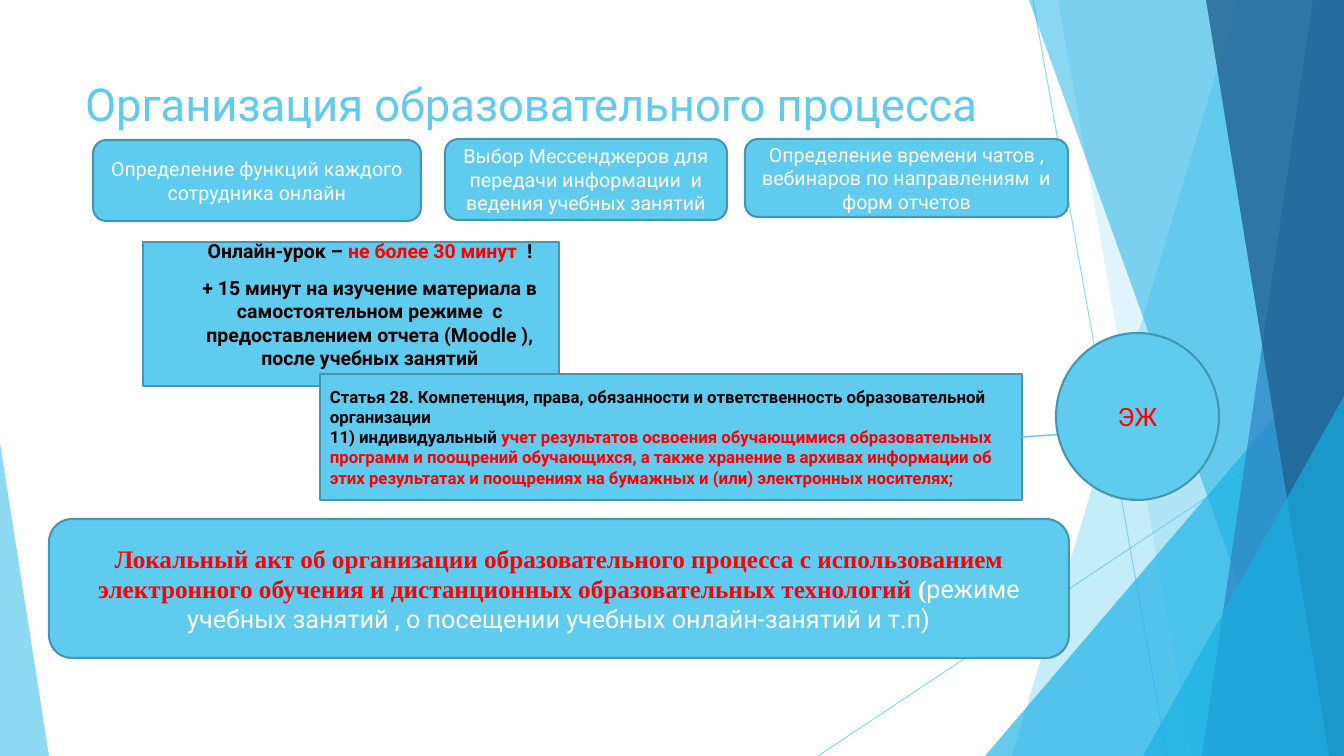
import pptx
import pptx.util
import pptx.dml.color
import pptx.enum.shapes
import pptx.enum.text
import pptx.oxml
import pptx.oxml.ns

RGB = pptx.dml.color.RGBColor
KIND = pptx.enum.shapes.MSO_SHAPE
ALIGN = pptx.enum.text.PP_ALIGN
ANCHOR = pptx.enum.text.MSO_ANCHOR

SKY = RGB(0x5F, 0xCB, 0xEF)
EDGE = RGB(0x46, 0x96, 0xB1)
CYAN = RGB(0x17, 0xB0, 0xE4)
BLUE = RGB(0x2E, 0x83, 0xC3)
NAVY = RGB(0x22, 0x62, 0x92)
RED = RGB(0xFF, 0, 0)
BLACK = RGB(0, 0, 0)
WHITE = RGB(0xFF, 0xFF, 0xFF)

EMU_PER_PX = 914400 / 100.8
WIDTH, HEIGHT = 1344, 756
SANS, SERIF = "Roboto", "Times New Roman"

TITLE = "Организация образовательного процесса"
TITLE_BOX = (75, 67, 947, 51)

RAYS = [(1033, 0, 1167, HEIGHT), (WIDTH, 406, 818, HEIGHT)]
# fmt: off
FACETS = [
    ("band", (1238, WIDTH, WIDTH, 1012), SKY, 36),
    ("band", (1058, WIDTH, WIDTH, 1192), SKY, 20),
    ("triangle", (985, 336, 359, 1), CYAN, 66),
    ("band", (1029, WIDTH, WIDTH, 1301), CYAN, 50),
    ("band", (1313, WIDTH, WIDTH, 1202), BLUE, 70),
    ("band", (1206, WIDTH, WIDTH, 1329), NAVY, 80),
    ("triangle", (1143, 396, 201, 1), CYAN, 66),
    ("triangle", (0, 443, 49, 0), SKY, 70),
]

STEPS = [
    ((93, 140, 328, 81), "Определение функций каждого сотрудника онлайн"),
    ((445, 139, 282, 81), "Выбор Мессенджеров для передачи информации  и ведения учебных занятий"),
    ((745, 139, 323, 78), "Определение времени чатов , вебинаров по направлениям  и форм отчетов"),
]

LESSON_BOX = (143, 242, 416, 144)
LESSON = [
    [("Онлайн-урок – ", SANS, BLACK, True),
     ("не более 30 минут  ", SANS, RED, True),
     ("!", SANS, BLACK, True)],
    [("+ 15 минут на изучение материала в самостоятельном режиме  с "
      "предоставлением отчета (Moodle ), после учебных занятий", SANS, BLACK, True)],
]

ARTICLE_BOX = (320, 374, 702, 126)
ARTICLE = [
    [("Статья 28. Компетенция, права, обязанности и ответственность "
      "образовательной организации", SANS, BLACK, True)],
    [("11) индивидуальный ", SANS, BLACK, True),
     ("учет результатов освоения обучающимися образовательных программ и поощрений "
      "обучающихся, а также хранение в архивах информации об этих результатах и "
      "поощрениях на бумажных и (или) электронных носителях;", SANS, RED, True)],
]

JOURNAL_BOX = (1056, 333, 163, 167)
JOURNAL = [[("ЭЖ", SANS, RED, False)]]
JOURNAL_LINK_END = (1067, 434)

ACT_BOX = (49, 519, 1020, 139)
ACT = [[
    ("Локальный акт об организации образовательного процесса с использованием "
     "электронного обучения и дистанционных образовательных технологий ", SERIF, RED, True),
    ("(", SERIF, WHITE, True),
    ("режиме учебных занятий , о посещении учебных онлайн-занятий и т.п)", SANS, WHITE, False),
]]


def px(*lengths):
    return [round(length * EMU_PER_PX) for length in lengths]


def set_alpha(properties, percent):
    color = properties.find(".//" + pptx.oxml.ns.qn("a:srgbClr"))
    alpha = pptx.oxml.parse_xml(f"<a:alpha {pptx.oxml.ns.nsdecls('a')} val='{percent * 1000}'/>")
    color.append(alpha)


def add_line(shapes, ends, width):
    line = shapes.add_connector(pptx.enum.shapes.MSO_CONNECTOR.STRAIGHT, *px(*ends))
    line.line.color.rgb = SKY
    line.line.width = pptx.util.Pt(width)
    line._element.spPr.append(
        pptx.oxml.parse_xml(f"<a:effectLst {pptx.oxml.ns.nsdecls('a')}/>"))
    return line


def add_facet(shapes, kind, geometry, color, percent):
    if kind == "band":
        top_left, top_right, bottom_right, bottom_left = geometry
        outline = shapes.build_freeform(top_left, 0, scale=EMU_PER_PX)
        outline.add_line_segments(
            [(top_right, 0), (bottom_right, HEIGHT), (bottom_left, HEIGHT)], close=True)
        facet = outline.convert_to_shape()
    else:
        left, top, width, apex = geometry
        facet = shapes.add_shape(KIND.ISOSCELES_TRIANGLE, *px(left, top, width, HEIGHT - top))
        facet.adjustments[0] = apex
    facet.shadow.inherit = False
    facet.fill.solid()
    facet.fill.fore_color.rgb = color
    facet.line.fill.background()
    set_alpha(facet._element.spPr, percent)


def write(paragraph, runs, size):
    for text, font, color, bold in runs:
        run = paragraph.add_run()
        run.text = text
        run.font.name = font
        run.font.size = pptx.util.Pt(size)
        run.font.bold = bold
        run.font.color.rgb = color


def add_card(shapes, kind, box, paragraphs, size, align=ALIGN.CENTER):
    card = shapes.add_shape(kind, *px(*box))
    card.shadow.inherit = False
    card.fill.solid()
    card.fill.fore_color.rgb = SKY
    card.line.color.rgb = EDGE
    card.line.width = pptx.util.Pt(1.5)
    frame = card.text_frame
    frame.word_wrap = True
    frame.vertical_anchor = ANCHOR.MIDDLE
    for index, runs in enumerate(paragraphs):
        paragraph = frame.add_paragraph() if index else frame.paragraphs[0]
        paragraph.alignment = align
        write(paragraph, runs, size)
    return card


def main():
    """Build the slide on organising the educational process."""
    deck = pptx.Presentation()
    deck.slide_width, deck.slide_height = px(WIDTH, HEIGHT)
    slide = deck.slides.add_slide(deck.slide_layouts[5])
    shapes = slide.shapes

    title = shapes.title
    title.left, title.top, title.width, title.height = px(*TITLE_BOX)
    title.text_frame.word_wrap = True
    title.text_frame.vertical_anchor = ANCHOR.TOP
    title.text_frame.margin_top = px(9)[0]
    heading = title.text_frame.paragraphs[0]
    heading.alignment = ALIGN.LEFT
    write(heading, [(TITLE, SANS, SKY, False)], 32.4)

    for ends in RAYS:
        ray = add_line(shapes, ends, 0.75)
        set_alpha(ray._element.spPr, 70)
    for facet in FACETS:
        add_facet(shapes, *facet)

    for box, step in STEPS:
        add_card(shapes, KIND.ROUNDED_RECTANGLE, box, [[(step, SANS, WHITE, False)]], 14)

    lesson = add_card(shapes, KIND.RECTANGLE, LESSON_BOX, LESSON, 13.9)
    lesson.text_frame.margin_bottom = px(25)[0]
    for paragraph in lesson.text_frame.paragraphs:
        paragraph._p.get_or_add_pPr().set("marL", str(px(38)[0]))
    lesson.text_frame.paragraphs[1].space_before = pptx.util.Pt(10)

    article = add_card(shapes, KIND.RECTANGLE, ARTICLE_BOX, ARTICLE, 12, ALIGN.LEFT)
    left, top, width, height = ARTICLE_BOX
    link = add_line(shapes, (left + width, top + height / 2, *JOURNAL_LINK_END), 1)
    link.begin_connect(article, 3)
    link.line._get_or_add_ln().append(
        pptx.oxml.parse_xml(f"<a:tailEnd {pptx.oxml.ns.nsdecls('a')} type='triangle'/>"))

    add_card(shapes, KIND.OVAL, JOURNAL_BOX, JOURNAL, 18)
    add_card(shapes, KIND.ROUNDED_RECTANGLE, ACT_BOX, ACT, 18)
    deck.save("out.pptx")


if __name__ == "__main__":
    main()
